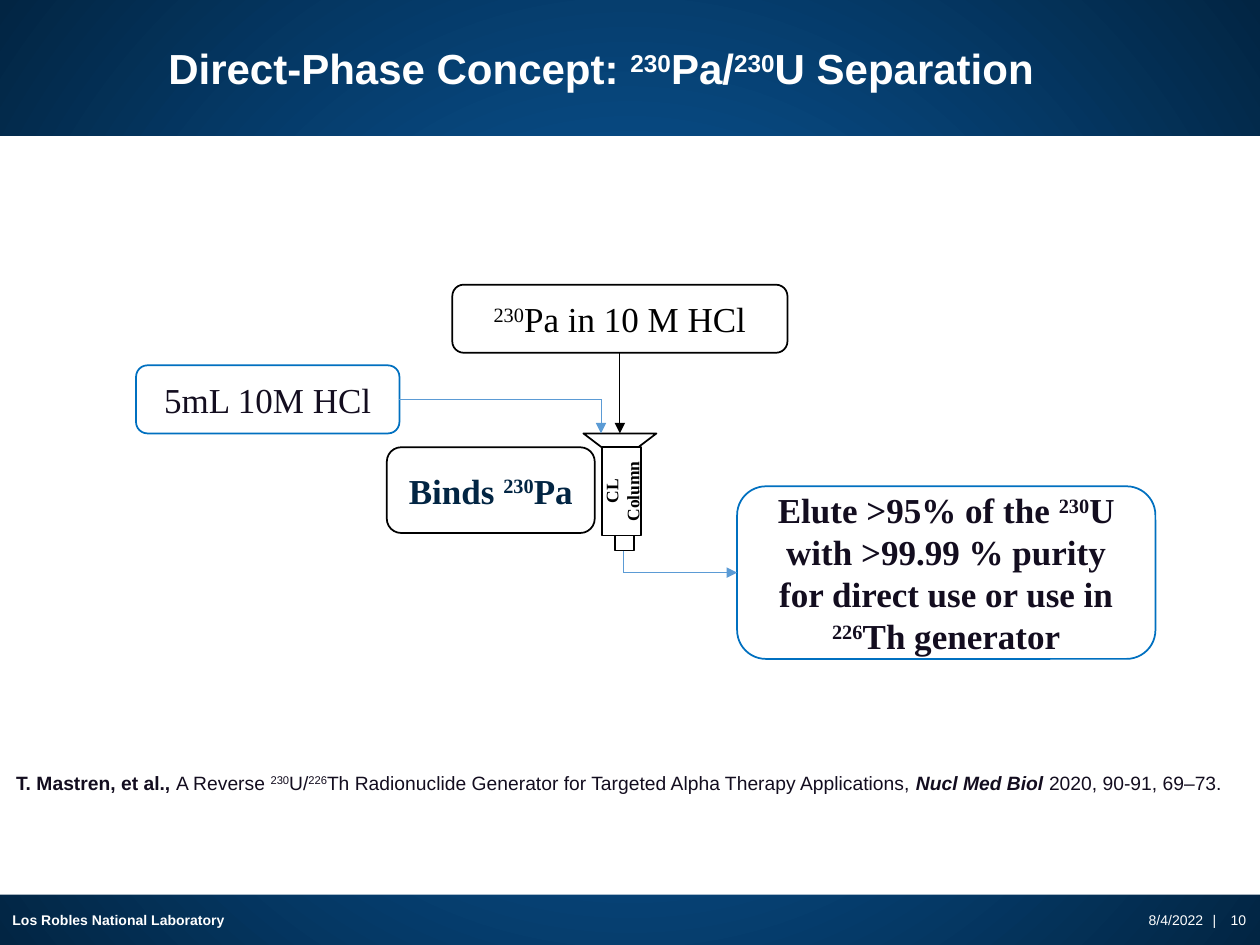
"""Build the slide on direct-phase separation of Pa and U."""
from dataclasses import dataclass

from lxml.etree import SubElement as Sub
from pptx import Presentation
from pptx.dml.color import RGBColor as Rgb
from pptx.enum.shapes import MSO_CONNECTOR as Link, MSO_SHAPE as Kind
from pptx.enum.text import MSO_ANCHOR as Anchor, MSO_AUTO_SIZE as Fit, PP_ALIGN as Align
from pptx.oxml.ns import qn
from pptx.util import Pt


@dataclass(frozen=True)
class Theme:
    sans: str = "Arial"
    serif: str = "Times New Roman"
    white: str = "FFFFFF"
    black: str = "000000"
    ink: str = "130D1F"
    navy: str = "022543"
    glow: str = "0B62AD"
    blue: str = "0070C0"
    sky: str = "5B9BD5"
    head: int = 24
    body: int = 20
    cite: int = 11
    small: int = 10
    foot: int = 8


T = Theme()
deck = Presentation()
deck.slide_width, deck.slide_height = Pt(720), Pt(540)
COL, ROW = deck.slide_width / 10, deck.slide_height / 7.5
MASS = {"230", "226"}


def write(shape, lines, font, size, color, bold=False, align=Align.CENTER, anchor=Anchor.MIDDLE):
    """Fill a shape with lines of runs, raising the mass numbers."""
    frame = shape.text_frame
    frame.text = "\n".join("" for line in lines)
    frame.word_wrap, frame.auto_size, frame.vertical_anchor = True, Fit.NONE, anchor
    for para, line in zip(frame.paragraphs, lines):
        para.alignment = align
        for part in line:
            run = para.add_run()
            run.text = part
            run.font.name, run.font.size, run.font.bold = font, Pt(size), bold
            run.font.color.rgb = Rgb.from_string(color)
            if part in MASS:
                run.font._element.set("baseline", "30000")
    return frame


def draw(home, kind, spot, edge=None):
    """Add a white shape at a left, top, width and height in columns and rows."""
    x, y, w, h = spot
    shape = home.add_shape(kind, int(x * COL), int(y * ROW), int(w * COL), int(h * ROW))
    shape.shadow.inherit = False
    shape.fill.solid()
    shape.fill.fore_color.rgb = Rgb.from_string(T.white)
    if edge:
        shape.line.color.rgb, shape.line.width = Rgb.from_string(edge), Pt(1)
    else:
        shape.line.fill.background()
    return shape


slide = deck.slides.add_slide(deck.slide_layouts[5])
items = slide.shapes

back = slide.background.fill
back.gradient()
for stop, color, place in zip(back.gradient_stops, (T.glow, T.navy), (0, 1)):
    stop.color.rgb, stop.position = Rgb.from_string(color), place
grad = slide._element.find(".//" + qn("a:gradFill"))
grad.remove(grad.find(qn("a:lin")))
ring = Sub(grad, qn("a:path"), {"path": "circle"})
Sub(ring, qn("a:fillToRect"), dict.fromkeys("ltrb", "50000"))

draw(items, Kind.RECTANGLE, (0, 1.08, 10, 6.02))
title = items.title
title.left, title.top = int(0.15 * COL), 0
title.width, title.height = int(9.24 * COL), int(1.08 * ROW)
write(title, [["Direct-Phase Concept: ", "230", "Pa/", "230", "U Separation"]],
      T.sans, T.head, T.white, True)

notes = [
    ((7.66, 7.1, 2.33, 0.4), ["8/4/2022", " | ", "10"],
     T.foot, T.white, False, Align.RIGHT, Anchor.MIDDLE),
    ((0, 7.1, 3.62, 0.4), ["Los Robles National Laboratory"],
     T.foot, T.white, True, Align.LEFT, Anchor.MIDDLE),
    ((0.03, 6.07, 9.97, 0.47),
     ["T. Mastren, et al., ", "A Reverse ", "230", "U/", "226",
      "Th Radionuclide Generator for Targeted Alpha Therapy Applications, ",
      "Nucl Med Biol ", "2020, 90-91, 69–73."],
     T.cite, T.ink, False, Align.LEFT, Anchor.TOP),
]
for (x, y, w, h), line, size, color, bold, align, anchor in notes:
    note = items.add_textbox(int(x * COL), int(y * ROW), int(w * COL), int(h * ROW))
    para = write(note, [line], T.sans, size, color, bold, align, anchor).paragraphs[0]
    for run in para.runs:
        if run.text == " | ":
            run.font._element.set("spc", "300")
        elif run.text.startswith("T. Mastren"):
            run.font.bold = True
        elif run.text.startswith("Nucl"):
            run.font.bold = run.font.italic = True

group = items.add_group_shape().shapes
funnel = draw(group, Kind.ISOSCELES_TRIANGLE, (4.63, 3.44, 0.58, 0.22), T.black)
funnel.rotation = 180
draw(group, Kind.RECTANGLE, (4.88, 4.2, 0.15, 0.17), T.black)
tube = draw(group, Kind.RECTANGLE, (4.78, 3.55, 0.31, 0.7), T.black)
frame = write(tube, [["CL"], ["Column"]], T.serif, T.small, T.black, True)
frame.margin_left = frame.margin_right = frame.margin_top = frame.margin_bottom = 0
frame._txBody.bodyPr.set("vert", "vert270")

steps = {
    "load": ((3.59, 2.26, 2.66, 0.54), T.black, T.black, False,
             [["230", "Pa in 10 M HCl"]]),
    "wash": ((1.08, 2.9, 2.09, 0.54), T.blue, T.ink, False, [["5mL 10M HCl"]]),
    "elute": ((5.85, 3.86, 3.32, 1.37), T.blue, T.ink, True,
              [["Elute >95% of the ", "230", "U with >99.99 % purity"],
               ["for direct use or use in ", "226", "Th generator"]]),
    "bind": ((3.07, 3.55, 1.65, 0.68), T.black, T.navy, True,
             [["Binds ", "230", "Pa"]]),
}
boxes = {}
for name, (spot, edge, color, bold, lines) in steps.items():
    boxes[name] = draw(items, Kind.ROUNDED_RECTANGLE, spot, edge)
    write(boxes[name], lines, T.serif, T.body, color, bold)

wash, elute = 2.9 + 0.54 / 2, 3.86 + 1.37 / 2
flows = [
    ((4.92, 2.8), (4.92, 3.44), T.black, True, ("load", 2), None),
    ((3.17, wash), (4.77, wash), T.sky, False, ("wash", 3), None),
    ((4.77, wash), (4.77, 3.44), T.sky, True, None, None),
    ((4.95, 4.37), (4.95, elute), T.sky, False, None, None),
    ((4.95, elute), (5.85, elute), T.sky, True, None, ("elute", 1)),
]
for (x, y), (u, v), color, arrow, start, end in flows:
    flow = items.add_connector(Link.STRAIGHT, int(x * COL), int(y * ROW),
                               int(u * COL), int(v * ROW))
    flow.line.color.rgb, flow.line.width = Rgb.from_string(color), Pt(0.5)
    props = flow._element.spPr
    if arrow:
        Sub(props.find(qn("a:ln")), qn("a:tailEnd"), {"type": "triangle"})
    Sub(props, qn("a:effectLst"))
    if start:
        flow.begin_connect(boxes[start[0]], start[1])
    if end:
        flow.end_connect(boxes[end[0]], end[1])

deck.save("out.pptx")
